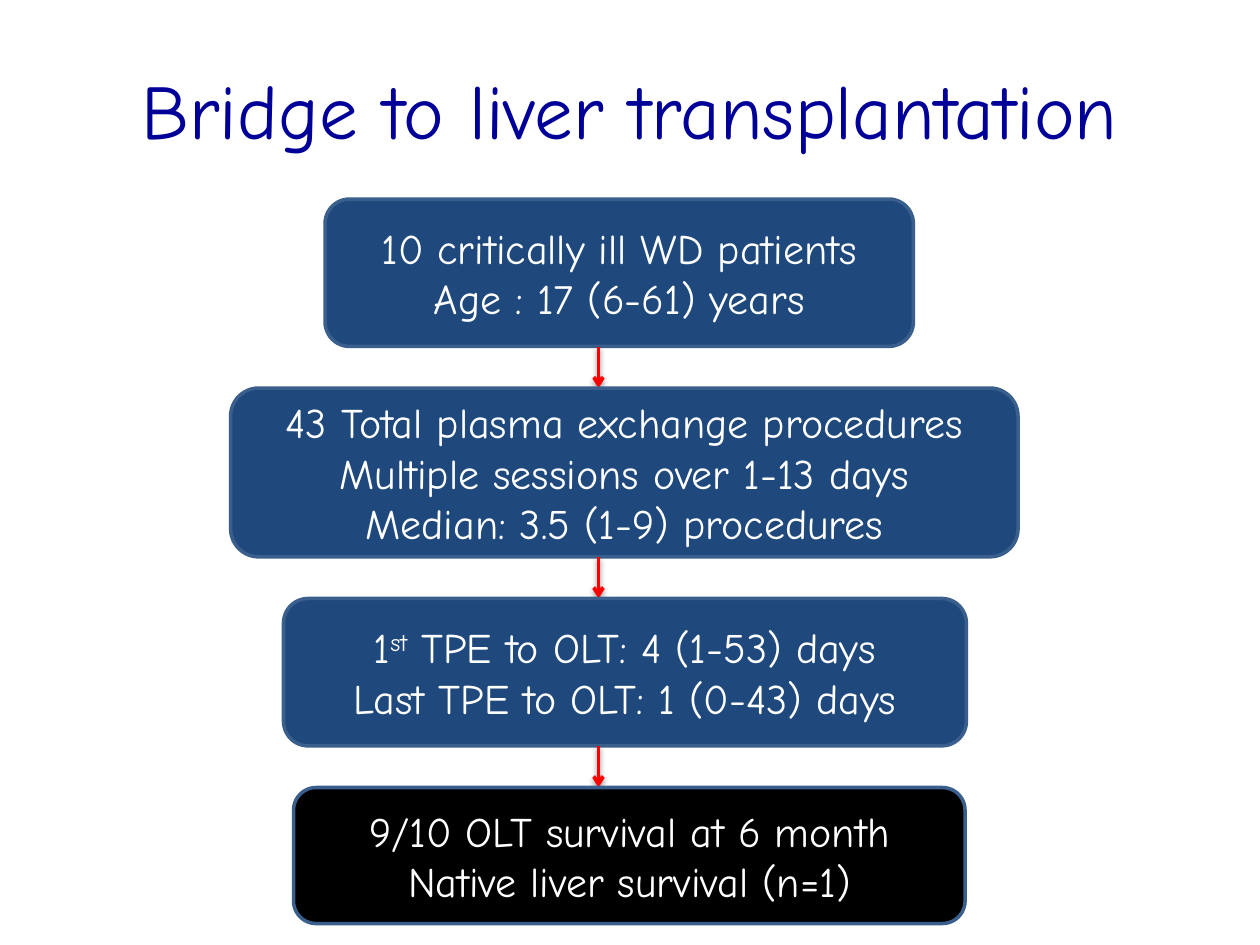
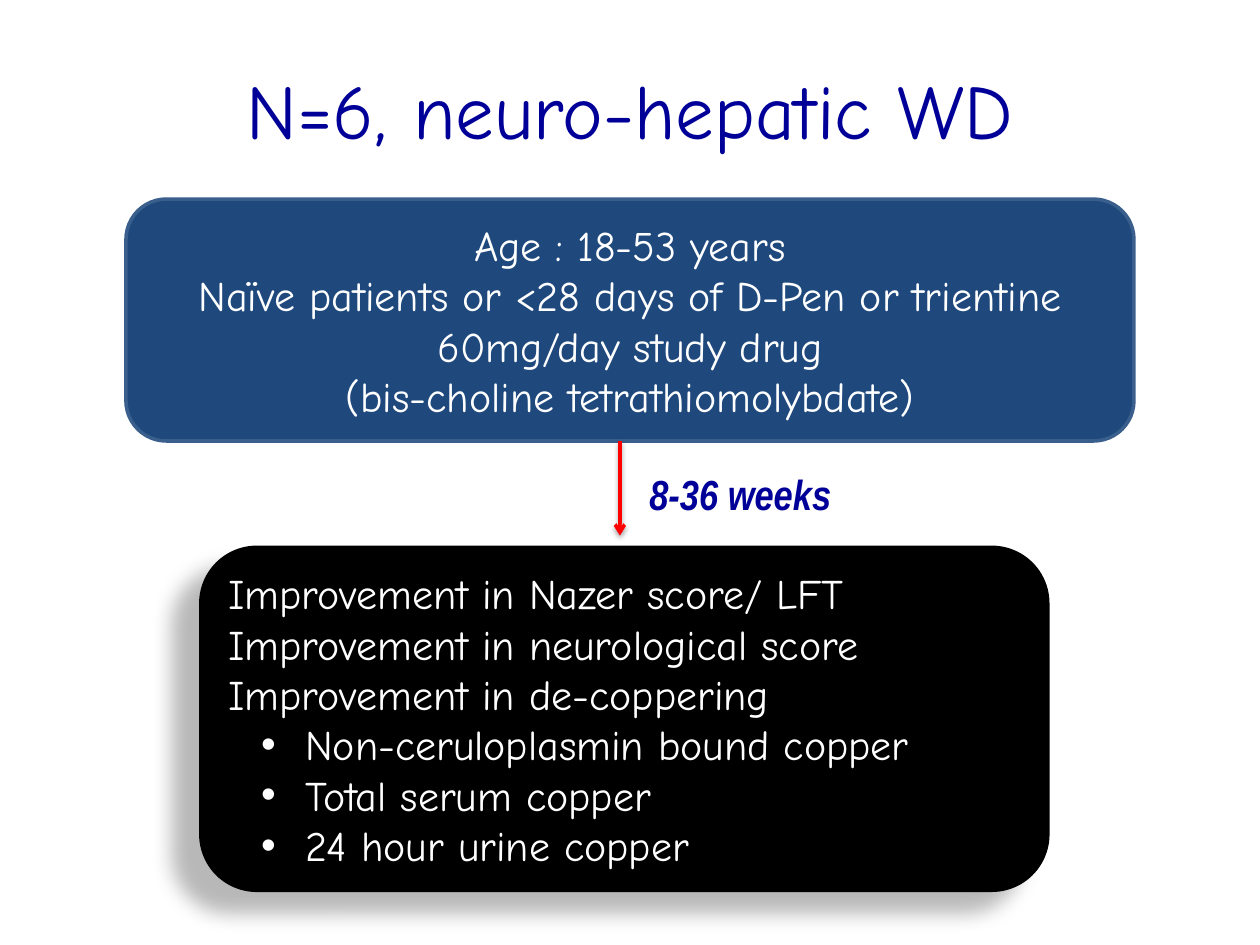
from dataclasses import dataclass
from lxml import etree
from pptx import Presentation
from pptx.dml.color import RGBColor
from pptx.enum import shapes, text
from pptx.oxml.ns import qn
from pptx.util import Inches, Pt


@dataclass(frozen=True)
class Theme:
    navy: str = "000099"
    blue: str = "1F497D"
    border: str = "3A5F8C"
    black: str = "000000"
    white: str = "FFFFFF"
    red: str = "FF0000"
    font: str = "Comic Neue"
    label_font: str = "Arial Narrow"
    title_size: int = 44
    body_size: int = 24
    line_width: int = 2
    # Opacity %, blur pt, distance pt, direction in degrees
    arrow_shadow: tuple = (38, 3.1, 1.6, 90)
    panel_shadow: tuple = (28, 11.8, 19.7, 141)


THEME = Theme()
CENTER, LEFT = text.PP_ALIGN.CENTER, text.PP_ALIGN.LEFT


# Shared helpers
def rgb(value):
    return RGBColor.from_string(value)


def add_run(p, words, color, size=THEME.body_size, font=THEME.font):
    r = p.add_run()
    r.text = words
    r.font.size, r.font.name = Pt(size), font
    r.font.color.rgb = rgb(color)
    return r


def set_shadow(sp, opacity, blur, distance, direction):
    sp_pr = sp._element.spPr
    for old in sp_pr.findall(qn("a:effectLst")):
        sp_pr.remove(old)
    effects = etree.SubElement(sp_pr, qn("a:effectLst"))
    shadow = etree.SubElement(
        effects, qn("a:outerShdw"), blurRad=str(Pt(blur)), dist=str(Pt(distance)),
        dir=str(direction * 60000), rotWithShape="0")
    color = etree.SubElement(shadow, qn("a:srgbClr"), val=THEME.black)
    etree.SubElement(color, qn("a:alpha"), val=str(opacity * 1000))


def set_bullet(p, margin, hanging):
    p_pr = p._p.get_or_add_pPr()
    p_pr.set("marL", str(Inches(margin)))
    p_pr.set("indent", str(-Inches(hanging)))
    etree.SubElement(p_pr, qn("a:buFont"), typeface="Arial")
    etree.SubElement(p_pr, qn("a:buChar"), char="•")


def add_titled_slide(prs, title):
    slide = prs.slides.add_slide(prs.slide_layouts[5])
    sp = slide.shapes.title
    sp.left, sp.top, sp.width, sp.height = map(Inches, (0.5, 0.3, 9, 1.12))
    tf = sp.text_frame
    tf.vertical_anchor = text.MSO_ANCHOR.MIDDLE
    p = tf.paragraphs[0]
    p.alignment = CENTER
    add_run(p, title, THEME.navy, THEME.title_size)
    return slide


def add_panel(slide, box, lines, fill=THEME.blue, outlined=True, align=CENTER):
    """Rounded box; a line is a string or a list of (words, superscript) runs."""
    sp = slide.shapes.add_shape(shapes.MSO_SHAPE.ROUNDED_RECTANGLE, *map(Inches, box))
    sp.shadow.inherit = False
    sp.fill.solid()
    sp.fill.fore_color.rgb = rgb(fill)
    if outlined:
        sp.line.color.rgb = rgb(THEME.border)
        sp.line.width = Pt(THEME.line_width)
    else:
        sp.line.fill.background()
    tf = sp.text_frame
    tf.word_wrap = True
    tf.vertical_anchor = text.MSO_ANCHOR.MIDDLE
    for i, line in enumerate(lines):
        p = tf.add_paragraph() if i else tf.paragraphs[0]
        p.alignment = align
        for words, raised in [(line, False)] if isinstance(line, str) else line:
            r = add_run(p, words, THEME.white)
            if raised:
                r._r.get_or_add_rPr().set("baseline", "30000")
    return sp


def add_down_arrow(slide, x, top, bottom):
    line = slide.shapes.add_connector(
        shapes.MSO_CONNECTOR.STRAIGHT, *map(Inches, (x, top, x, bottom)))
    line.line.color.rgb = rgb(THEME.red)
    line.line.width = Pt(THEME.line_width)
    etree.SubElement(line.line._get_or_add_ln(), qn("a:tailEnd"), type="arrow")
    set_shadow(line, *THEME.arrow_shadow)


# Slide 1: chain of boxes joined by arrows
def add_flow(slide, top, gap, arrow_x, steps):
    for i, (left, width, height, fill, lines) in enumerate(steps):
        if i:
            add_down_arrow(slide, arrow_x, top - gap, top)
        add_panel(slide, (left, top, width, height), lines, fill)
        top += height + gap


def build_bridge_slide(prs):
    slide = add_titled_slide(prs, "Bridge to liver transplantation")
    add_flow(slide, 1.58, 0.33, 4.75, [
        (2.58, 4.67, 1.17, THEME.blue,
         ["10 critically ill WD patients", "Age : 17 (6-61) years"]),
        (1.83, 6.25, 1.34, THEME.blue,
         ["43 Total plasma exchange procedures", "Multiple sessions over 1-13 days",
          "Median: 3.5 (1-9) procedures"]),
        (2.25, 5.42, 1.17, THEME.blue,
         [[("1", False), ("st", True), (" TPE to OLT: 4 (1-53) days", False)],
          "Last TPE to OLT: 1 (0-43) days"]),
        (2.33, 5.33, 1.08, THEME.black,
         ["9/10 OLT survival at 6 month", "Native liver survival (n=1)"]),
    ])


# Slide 2: cohort, follow-up time and outcomes
def add_duration_label(slide, box, words):
    tf = slide.shapes.add_textbox(*map(Inches, box)).text_frame
    tf.word_wrap = True
    p = tf.paragraphs[0]
    p.alignment = CENTER
    r = add_run(p, words, THEME.navy, font=THEME.label_font)
    r.font.bold = r.font.italic = True


def add_outcomes(slide, box, findings, measures):
    sp = add_panel(slide, box, findings + measures, THEME.black, outlined=False, align=LEFT)
    set_shadow(sp, *THEME.panel_shadow)
    for p in sp.text_frame.paragraphs[len(findings):]:
        p.level = 1
        set_bullet(p, 0.61, 0.35)


def build_cohort_slide(prs):
    slide = add_titled_slide(prs, "N=6, neuro-hepatic WD")
    add_panel(slide, (1, 1.58, 8, 1.92), [
        "Age : 18-53 years",
        "Naïve patients or <28 days of D-Pen or trientine",
        "60mg/day study drug",
        "(bis-choline tetrathiomolybdate)",
    ])
    add_down_arrow(slide, 4.92, 3.5, 4.25)
    add_outcomes(
        slide, (1.58, 4.33, 6.75, 2.75),
        ["Improvement in Nazer score/ LFT", "Improvement in neurological score",
         "Improvement in de-coppering"],
        ["Non-ceruloplasmin bound copper", "Total serum copper", "24 hour urine copper"])
    add_duration_label(slide, (5, 3.67, 1.75, 0.5), "8-36 weeks")


def main():
    prs = Presentation()
    prs.slide_width, prs.slide_height = Inches(10), Inches(7.5)
    build_bridge_slide(prs)
    build_cohort_slide(prs)
    prs.save("out.pptx")


if __name__ == "__main__":
    main()
